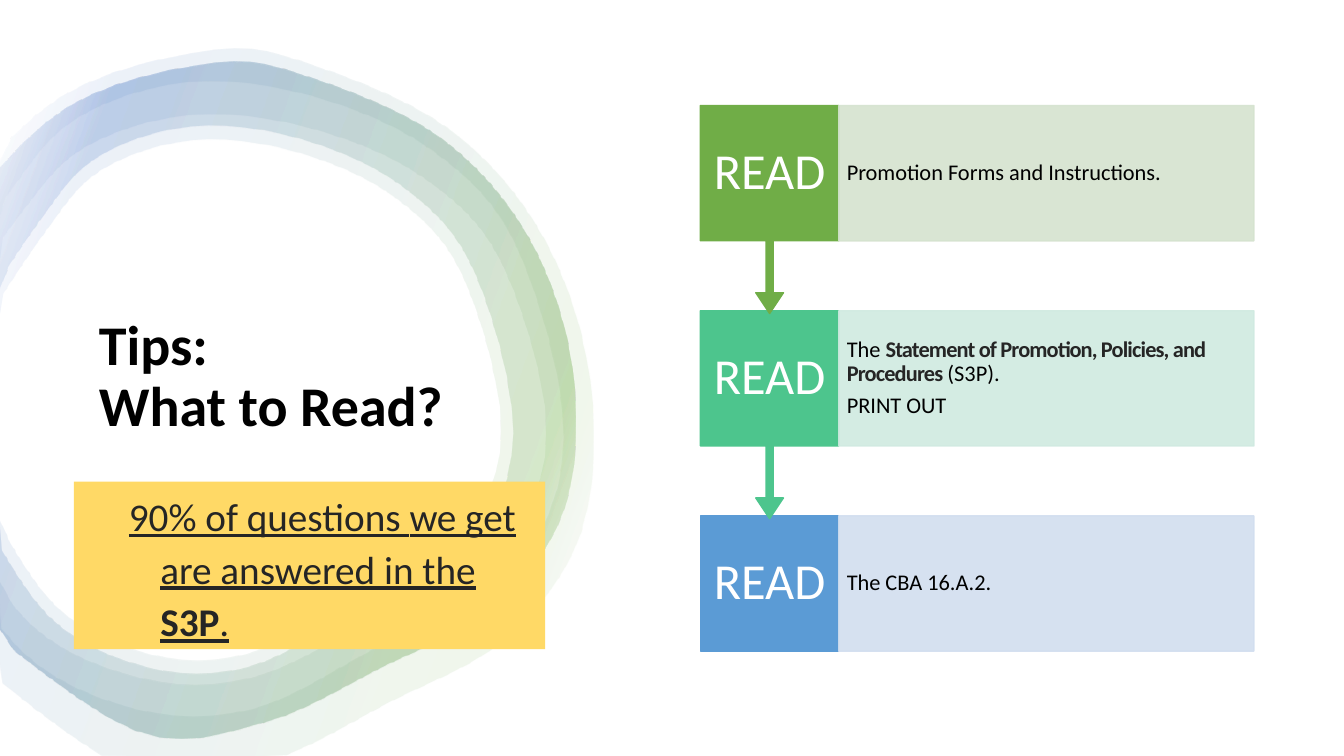
"""Build the 'What to Read?' tips slide with a brushed ring and three reading steps."""
from lxml import etree
from pptx import Presentation
from pptx.dml.color import RGBColor
from pptx.enum.shapes import MSO_SHAPE
from pptx.enum.text import MSO_ANCHOR, PP_ALIGN
from pptx.oxml import parse_xml
from pptx.oxml.ns import qn
from pptx.util import Cm, Pt

RECTANGLE = MSO_SHAPE.RECTANGLE
ARROW_CALLOUT = MSO_SHAPE.UP_ARROW_CALLOUT
TOP, MIDDLE = MSO_ANCHOR.TOP, MSO_ANCHOR.MIDDLE
LEFT, CENTER = PP_ALIGN.LEFT, PP_ALIGN.CENTER
FONT = "Calibri"
BLACK, WHITE, CHARCOAL = "000000", "FFFFFF", "252525"
PAGE_WIDTH, PAGE_HEIGHT = 33.87, 19.05
CURVE_STEPS = 6

RING_STOPS = [(2, WHITE), (16, "70AD47"), (85, "4472C4"), (100, WHITE)]
RING_GRADIENT = (
    '<a:gradFill xmlns:a="http://schemas.openxmlformats.org/drawingml/2006/main"><a:gsLst>'
    + "".join(f'<a:gs pos="{stop}000"><a:srgbClr val="{color}"><a:alpha val="10000"/>'
              "</a:srgbClr></a:gs>" for stop, color in RING_STOPS)
    + '</a:gsLst><a:lin ang="12000000" scaled="0"/></a:gradFill>')
RING_X, RING_Y = 5.3, 10.2
OUTER_EDGE = [
    (-1.3, 5.6), (1.7, 2.7), (5.4, 1.6), (7.9, 2), (11.1, 3.5), (13.3, 6), (14.4, 9.3),
    (14.2, 12.8), (12.4, 15.3), (9.6, 16.8), (6.6, 18.2), (3.4, 18.4), (-0.8, 15.5)]
INNER_EDGE = [
    (-0.8, 12.4), (1.2, 15.5), (3.7, 16.8), (6.2, 16.8), (8.8, 15.5), (11.8, 13.8),
    (12.9, 10.9), (11.9, 6.8), (10.1, 4.7), (7.5, 3.5), (4.8, 3.2), (2.4, 4), (0.9, 5.7),
    (-1, 8.6)]
SAME = (1, 1, 0)
RING_LAYERS = [
    (SAME, (1.11, 1.04, 0)), (SAME, SAME), (SAME, (0.96, 0.95, 0)), (SAME, SAME),
    ((1.05, 1.08, 0.35), (1.17, 1.16, 0))]

STEPS = [
    ("70AD47", "D5E3CF", [[("Promotion Forms and Instructions.", False)]]),
    ("4DC58D", "D0EAE1", [[("The ", False),
                           ("Statement of Promotion, Policies, and Procedures ", True),
                           ("(S3P).", False)],
                          [("PRINT OUT", False)]]),
    ("5B9BD5", "D2DEEF", [[("The CBA 16.A.2.", False)]]),
]
STEP_LEFT, STEP_TOP, STEP_PITCH, STEP_HEIGHT = 17.65, 2.66, 5.17, 3.41
LABEL_WIDTH, PANEL_WIDTH, CALLOUT_HEIGHT = 3.49, 10.46, 5.24
NOTE_SPANS = [("90% of questions ", 0, False), ("we ", -10, False),
              ("get are answered in the", 0, False), (" ", -10, False),
              ("S3P", 0, True), (".", 0, False)]


def add_span(para, text, size, color, bold=False, spacing=0):
    span = para.add_run()
    span.text = text
    span.font.name, span.font.size, span.font.bold = FONT, Pt(size), bold
    span.font.color.rgb = RGBColor.from_string(color)
    if spacing:
        span.font._element.set("spc", str(spacing))
    return span


def add_block(kind, left, top, width, height, color, opacity=100):
    block = page.shapes.add_shape(kind, Cm(left), Cm(top), Cm(width), Cm(height))
    block.shadow.inherit = False
    block.line.width = Pt(1)
    for fill in (block.fill, block.line.fill):
        fill.solid()
        fill.fore_color.rgb = RGBColor.from_string(color)
    if opacity < 100:
        for tint in block._element.spPr.iter(qn("a:srgbClr")):
            etree.SubElement(tint, qn("a:alpha")).set("val", str(opacity * 1000))
    return block


deck = Presentation()
deck.slide_width, deck.slide_height = Cm(PAGE_WIDTH), Cm(PAGE_HEIGHT)
page = deck.slides.add_slide(deck.slide_layouts[5])
page.background.fill.solid()
page.background.fill.fore_color.rgb = RGBColor.from_string(WHITE)

for layer in RING_LAYERS:
    outline = []
    for edge, (scale_x, scale_y, drop) in zip((OUTER_EDGE, INNER_EDGE), layer):
        knots = [edge[0], *edge, edge[-1]]
        for before, start, end, after in zip(knots, knots[1:], knots[2:], knots[3:]):
            for step in range(CURVE_STEPS):
                t = step / CURVE_STEPS
                x, y = (b + (c - a) * t / 2 + (2 * a - 5 * b + 4 * c - d) * t ** 2 / 2
                        + (3 * b - a - 3 * c + d) * t ** 3 / 2
                        for a, b, c, d in zip(before, start, end, after))
                x = RING_X + (x - RING_X) * scale_x
                y = RING_Y + (y - RING_Y) * scale_y + drop
                outline.append((Cm(max(x, 0)), Cm(min(y, PAGE_HEIGHT))))
    builder = page.shapes.build_freeform(*outline[0])
    builder.add_line_segments(outline[1:], close=True)
    ring = builder.convert_to_shape()
    ring.shadow.inherit = False
    ring.line.fill.background()
    ring._element.spPr.find(qn("a:custGeom")).addnext(parse_xml(RING_GRADIENT))

title = page.shapes.title
title.left, title.top, title.width, title.height = Cm(2.24), Cm(5.61), Cm(10.16), Cm(7.82)
title.text_frame.vertical_anchor = MIDDLE
title.text_frame.word_wrap = True
para = title.text_frame.paragraphs[0]
para.alignment, para.line_spacing = LEFT, 0.9
add_span(para, "Tips: ", 40, BLACK, True)
para.add_line_break()
add_span(para, "What to Read?", 40, BLACK, True)

for index, (color, tint, paragraphs) in reversed(list(enumerate(STEPS))):
    top = STEP_TOP + index * STEP_PITCH
    if index == len(STEPS) - 1:
        add_block(RECTANGLE, STEP_LEFT, top, LABEL_WIDTH, STEP_HEIGHT, color)
    else:
        callout = add_block(ARROW_CALLOUT, STEP_LEFT, top, LABEL_WIDTH, CALLOUT_HEIGHT, color)
        callout.rotation = 180
        for position, value in enumerate((0.05, 0.1, 0.15, 0.65)):
            callout.adjustments[position] = value

    label = page.shapes.add_textbox(Cm(STEP_LEFT), Cm(top), Cm(LABEL_WIDTH), Cm(STEP_HEIGHT))
    label.text_frame.word_wrap = True
    label.text_frame.vertical_anchor = MIDDLE
    para = label.text_frame.paragraphs[0]
    para.alignment, para.line_spacing = CENTER, 0.9
    add_span(para, "READ", 36, WHITE)

    panel = add_block(RECTANGLE, STEP_LEFT + LABEL_WIDTH, top, PANEL_WIDTH, STEP_HEIGHT, tint, 90)
    frame = panel.text_frame
    frame.margin_left = frame.margin_right = Cm(0.2)
    frame.margin_top = frame.margin_bottom = Cm(0.56)
    frame.vertical_anchor = MIDDLE
    for number, spans in enumerate(paragraphs):
        para = frame.add_paragraph() if number else frame.paragraphs[0]
        para.alignment, para.line_spacing, para.space_after = LEFT, 0.9, Pt(5.6)
        for text, strong in spans:
            add_span(para, text, 16, CHARCOAL if strong else BLACK, strong, -60 if strong else 0)

note = add_block(RECTANGLE, 1.86, 12.14, 11.88, 4.22, "FFD966")
note.line.fill.background()
note.text_frame.vertical_anchor = TOP
para = note.text_frame.paragraphs[0]
para.alignment, para.line_spacing, para.space_before = LEFT, 1.12, Pt(9.6)
indents = para._p.get_or_add_pPr()
indents.set("marL", str(Cm(1.93)))
indents.set("indent", str(Cm(-0.79)))
for text, spacing, strong in NOTE_SPANS:
    add_span(para, text, 28, CHARCOAL, strong, spacing).font.underline = True

deck.save("out.pptx")
